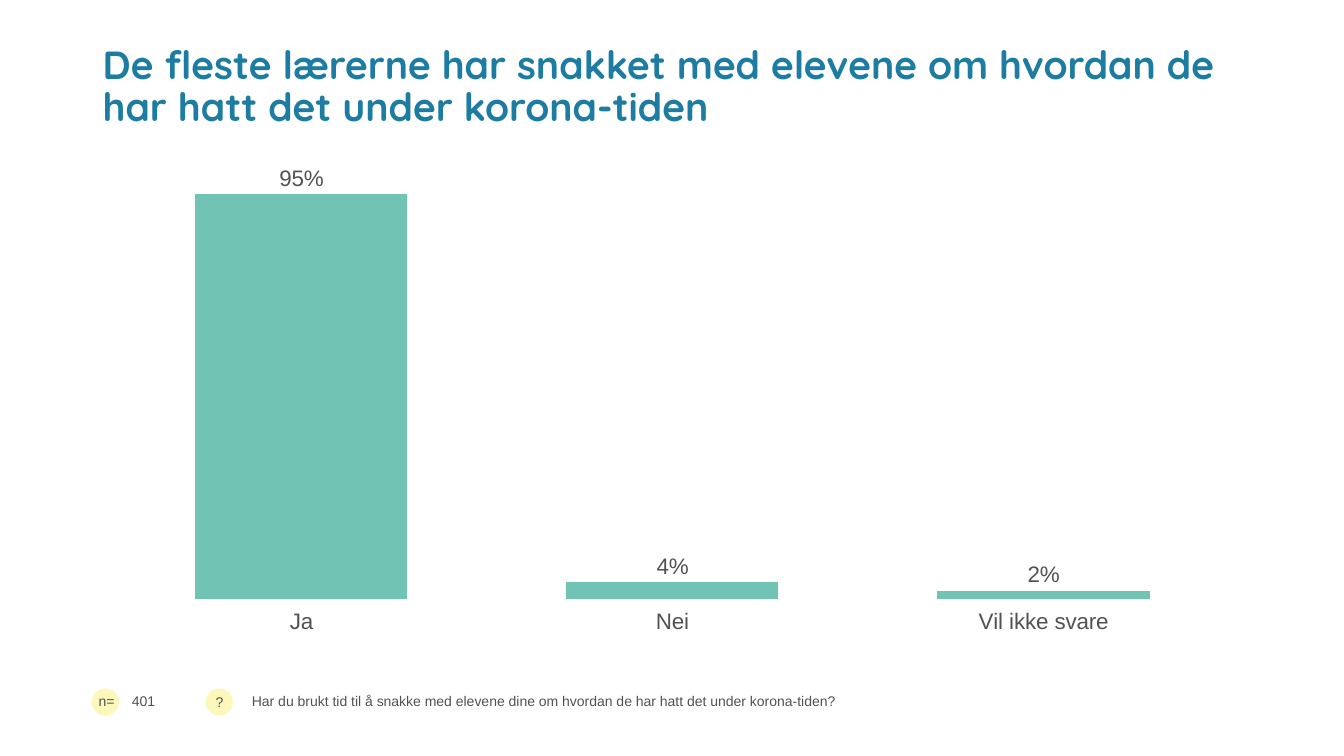
from pptx import Presentation
from pptx.chart.data import CategoryChartData
from pptx.dml.color import RGBColor
from pptx.enum.chart import XL_CHART_TYPE, XL_LABEL_POSITION, XL_TICK_LABEL_POSITION, XL_TICK_MARK
from pptx.enum.shapes import MSO_SHAPE
from pptx.enum.text import MSO_ANCHOR
from pptx.util import Inches, Pt

COLORS = {"title": "1C7CA1", "text": "515350", "bar": "71C3B3", "badge": "FCF7BA"}
TITLE_FONT = {"name": "Quicksand", "size": Pt(28), "bold": True}
NOTE_FONT = {"name": "Arial", "size": Pt(10)}
CHART_FONT = {"name": "Arial", "size": Pt(16)}
FOOTER_TOP = 6.83
FOOTER_HEIGHT = 0.27


def color(name):
    return RGBColor.from_string(COLORS[name])


def set_font(font, values, color_name="text"):
    for key, value in values.items():
        setattr(font, key, value)
    font.color.rgb = color(color_name)


def add_text(slide, box, text, font, color_name="text", anchor=MSO_ANCHOR.MIDDLE, spacing=0.9):
    shape = slide.shapes.add_textbox(*map(Inches, box))
    frame = shape.text_frame
    frame.word_wrap = True
    frame.vertical_anchor = anchor
    paragraph = frame.paragraphs[0]
    paragraph.line_spacing = spacing
    run = paragraph.add_run()
    run.text = text
    set_font(run.font, font, color_name)


def add_badge(slide, left, text, text_box):
    shape = slide.shapes.add_shape(
        MSO_SHAPE.OVAL, Inches(left), Inches(FOOTER_TOP), Inches(FOOTER_HEIGHT), Inches(FOOTER_HEIGHT)
    )
    shape.shadow.inherit = False
    shape.fill.solid()
    shape.fill.fore_color.rgb = color("badge")
    shape.line.fill.background()
    add_text(slide, text_box, text, NOTE_FONT, anchor=MSO_ANCHOR.TOP, spacing=1.0)


def add_answer_chart(slide, box, answers):
    data = CategoryChartData(number_format="0%")
    data.categories = list(answers)
    data.add_series("Series 1", list(answers.values()))
    chart = slide.shapes.add_chart(XL_CHART_TYPE.COLUMN_CLUSTERED, *map(Inches, box), data).chart
    chart.has_legend = False
    chart.has_title = False
    set_font(chart.font, {"name": "Arial", "size": Pt(18)})

    category_axis = chart.category_axis
    category_axis.major_tick_mark = XL_TICK_MARK.NONE
    category_axis.tick_label_position = XL_TICK_LABEL_POSITION.LOW
    category_axis.format.line.fill.background()
    set_font(category_axis.tick_labels.font, CHART_FONT)

    value_axis = chart.value_axis
    axis_format = {
        "minimum_scale": 0,
        "maximum_scale": 1,
        "major_unit": 0.2,
        "has_major_gridlines": False,
        "visible": False,
    }
    for key, value in axis_format.items():
        setattr(value_axis, key, value)

    plot = chart.plots[0]
    plot.gap_width = 75
    plot.vary_by_categories = False
    series = plot.series[0]
    series.format.fill.solid()
    series.format.fill.fore_color.rgb = color("bar")

    labels = series.data_labels
    label_format = {
        "show_value": True,
        "number_format": "0%",
        "number_format_is_linked": False,
        "position": XL_LABEL_POSITION.OUTSIDE_END,
    }
    for key, value in label_format.items():
        setattr(labels, key, value)
    set_font(labels.font, CHART_FONT)


def main():
    presentation = Presentation()
    presentation.slide_width = Inches(13.33)
    presentation.slide_height = Inches(7.5)
    slide = presentation.slides.add_slide(presentation.slide_layouts[6])

    add_text(
        slide,
        (0.92, 0.4, 11.5, 1.08),
        "De fleste lærerne har snakket med elevene om hvordan de har hatt det under korona-tiden",
        TITLE_FONT,
        "title",
        MSO_ANCHOR.TOP,
    )
    add_answer_chart(slide, (0.92, 1.62, 11.5, 4.76), {"Ja": 0.95, "Nei": 0.04, "Vil ikke svare": 0.02})
    add_badge(slide, 0.91, "n=", (0.88, 6.82, 0.45, FOOTER_HEIGHT))
    add_badge(slide, 2.04, "?", (2.04, FOOTER_TOP, 0.25, FOOTER_HEIGHT))
    add_text(slide, (1.21, FOOTER_TOP, 0.74, FOOTER_HEIGHT), "401", NOTE_FONT)
    add_text(
        slide,
        (2.4, FOOTER_TOP, 9.91, FOOTER_HEIGHT),
        "Har du brukt tid til å snakke med elevene dine om hvordan de har hatt det under korona-tiden?",
        NOTE_FONT,
    )
    presentation.save("out.pptx")


if __name__ == "__main__":
    main()
